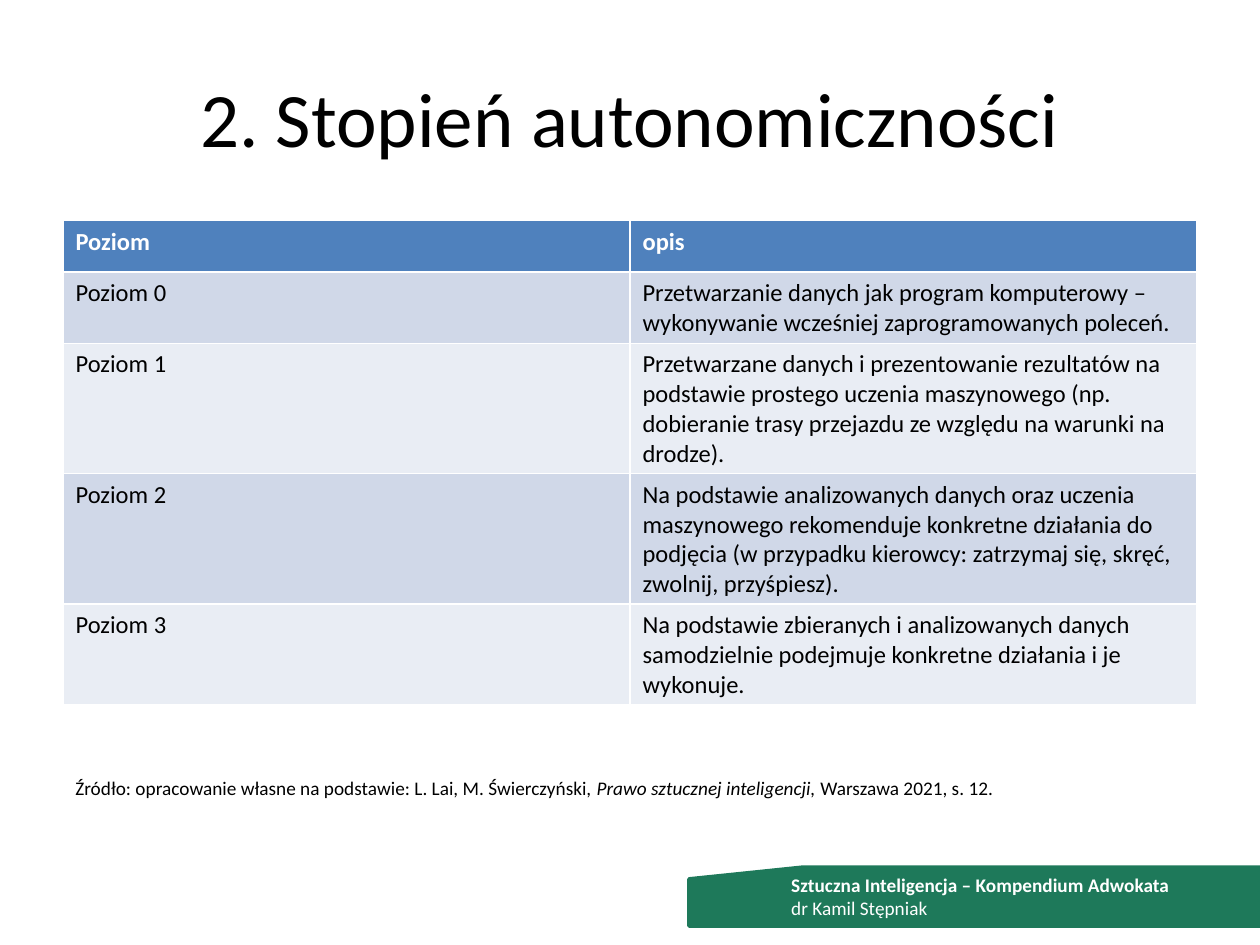
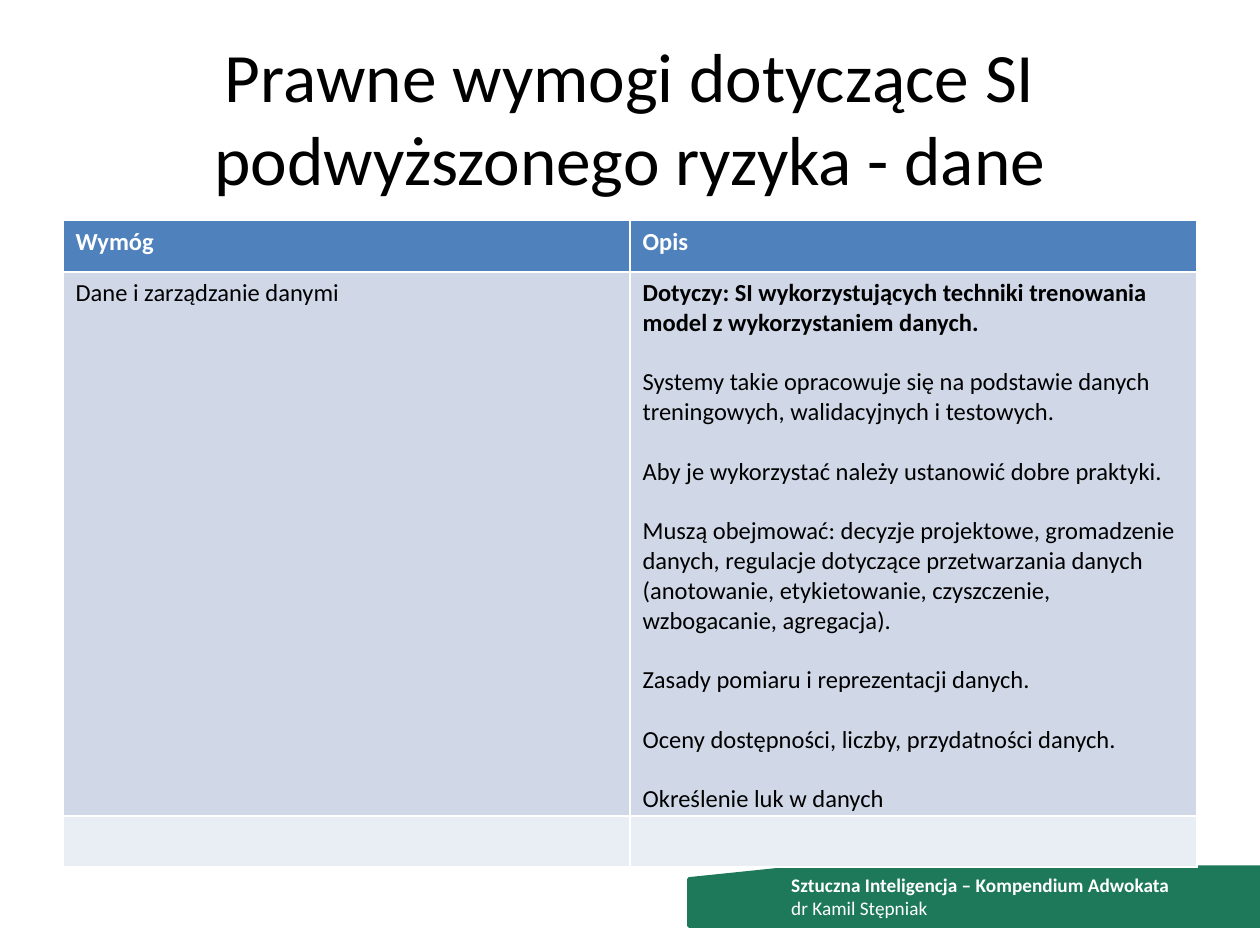
from pptx import Presentation
from pptx.dml.color import RGBColor
from pptx.enum.shapes import MSO_SHAPE
from pptx.enum.text import MSO_ANCHOR, MSO_AUTO_SIZE, PP_ALIGN
from pptx.util import Cm, Pt

BLACK = RGBColor(0x00, 0x00, 0x00)
WHITE = RGBColor(0xFF, 0xFF, 0xFF)
GREEN = RGBColor(0x1E, 0x79, 0x5A)
BLUE = RGBColor(0x4F, 0x81, 0xBD)
BANDS = [RGBColor(0xD0, 0xD8, 0xE8), RGBColor(0xE9, 0xED, 0xF4)]

FONT = "Calibri"
LEFT, WIDTH = Cm(1.27), Cm(22.86)
TITLE = (LEFT, Cm(0.76), WIDTH, Cm(3.18))
TABLE_TOP, ROW = Cm(4.45), Cm(1.03)
BAND = (Cm(13.89), Cm(17.48), Cm(11.51), Cm(1.19))
LABEL = (Cm(15.7), Cm(17.48), Cm(9.6), Cm(1.19))
NOTE = (LEFT, Cm(15.52), WIDTH, Cm(0.74))

HEAD = {"size": Pt(14), "bold": True, "color": WHITE}
BODY = {"size": Pt(14), "bold": False, "color": BLACK}
STRONG = {**BODY, "bold": True}
SMALL = {"size": Pt(11), "bold": False, "color": BLACK}
ITALIC = {**SMALL, "italic": True}
FOOT = {**SMALL, "color": WHITE}
FOOT_BOLD = {**FOOT, "bold": True}

FOOTER = [
    [("Sztuczna Inteligencja – Kompendium Adwokata", FOOT_BOLD)],
    [("dr Kamil Stępniak", FOOT)],
]
SLIDES = [
    {
        "title": "2. Stopień autonomiczności",
        "size": 44,
        "head": ["Poziom", "opis"],
        "rows": [
            ["Poziom 0", ["Przetwarzanie danych jak program komputerowy – wykonywanie wcześniej zaprogramowanych poleceń."]],
            ["Poziom 1", ["Przetwarzane danych i prezentowanie rezultatów na podstawie prostego uczenia maszynowego (np. dobieranie trasy przejazdu ze względu na warunki na drodze)."]],
            ["Poziom 2", ["Na podstawie analizowanych danych oraz uczenia maszynowego rekomenduje konkretne działania do podjęcia (w przypadku kierowcy: zatrzymaj się, skręć, zwolnij, przyśpiesz)."]],
            ["Poziom 3", ["Na podstawie zbieranych i analizowanych danych samodzielnie podejmuje konkretne działania i je wykonuje."]],
        ],
        "note": [
            ("Źródło: opracowanie własne na podstawie: L. Lai, M. Świerczyński, ", SMALL),
            ("Prawo sztucznej inteligencji,", ITALIC),
            (" Warszawa 2021, s. 12.", SMALL),
        ],
    },
    {
        "title": "Prawne wymogi dotyczące SI podwyższonego ryzyka - dane",
        "size": 39.6,
        "head": ["Wymóg", "Opis"],
        "rows": [
            ["Dane i zarządzanie danymi", [
                "Dotyczy: SI wykorzystujących techniki trenowania model z wykorzystaniem danych.",
                "Systemy takie opracowuje się na podstawie danych treningowych, walidacyjnych i testowych.",
                "Aby je wykorzystać należy ustanowić dobre praktyki.",
                "Muszą obejmować: decyzje projektowe, gromadzenie danych, regulacje dotyczące przetwarzania danych (anotowanie, etykietowanie, czyszczenie, wzbogacanie, agregacja).",
                "Zasady pomiaru i reprezentacji danych.",
                "Oceny dostępności, liczby, przydatności danych.",
                "Określenie luk w danych",
            ]],
            ["", []],
        ],
        "note": [],
    },
]


def style(font, form):
    font.name = FONT
    for key, value in form.items():
        if key == "color":
            font.color.rgb = value
        else:
            setattr(font, key, value)


def write(frame, paras, gap=0):
    frame.word_wrap = True
    for i, runs in enumerate(paras):
        para = frame.add_paragraph() if i else frame.paragraphs[0]
        para.space_before = Pt(gap if i else 0)
        for text, form in runs:
            run = para.add_run()
            run.text = text
            style(run.font, form)


def add_text(slide, place, paras):
    write(slide.shapes.add_textbox(*place).text_frame, paras)


def add_title(slide, text, size):
    title = slide.shapes.title
    for key, value in zip(("left", "top", "width", "height"), TITLE):
        setattr(title, key, value)
    frame = title.text_frame
    write(frame, [[(text, {"size": Pt(size), "color": BLACK})]])
    frame.auto_size = MSO_AUTO_SIZE.NONE
    frame.vertical_anchor = MSO_ANCHOR.MIDDLE
    frame.paragraphs[0].alignment = PP_ALIGN.CENTER


def add_footer(slide):
    band = slide.shapes.add_shape(MSO_SHAPE.FLOWCHART_CARD, *BAND)
    band.shadow.inherit = False
    band.fill.solid()
    band.fill.fore_color.rgb = GREEN
    band.line.color.rgb = GREEN
    band.line.width = Pt(2)
    add_text(slide, LABEL, FOOTER)


def fill_cell(cell, color, paras):
    cell.fill.solid()
    cell.fill.fore_color.rgb = color
    write(cell.text_frame, paras, gap=17)


def add_grid(slide, head, rows):
    count = len(rows) + 1
    grid = slide.shapes.add_table(count, 2, LEFT, TABLE_TOP, WIDTH, ROW * count).table
    for col, text in enumerate(head):
        fill_cell(grid.cell(0, col), BLUE, [[(text, HEAD)]])
    for i, (name, lines) in enumerate(rows):
        color = BANDS[i % 2]
        first = STRONG if len(lines) > 1 else BODY
        paras = [[(line, BODY if j else first)] for j, line in enumerate(lines)]
        fill_cell(grid.cell(i + 1, 0), color, [[(name, BODY)]] if name else [])
        fill_cell(grid.cell(i + 1, 1), color, paras)


def main():
    deck = Presentation()
    deck.slide_width, deck.slide_height = Cm(25.4), Cm(19.05)
    for page in SLIDES:
        slide = deck.slides.add_slide(deck.slide_layouts[5])
        add_title(slide, page["title"], page["size"])
        add_footer(slide)
        add_grid(slide, page["head"], page["rows"])
        if page["note"]:
            add_text(slide, NOTE, [page["note"]])
    deck.save("out.pptx")


if __name__ == "__main__":
    main()
